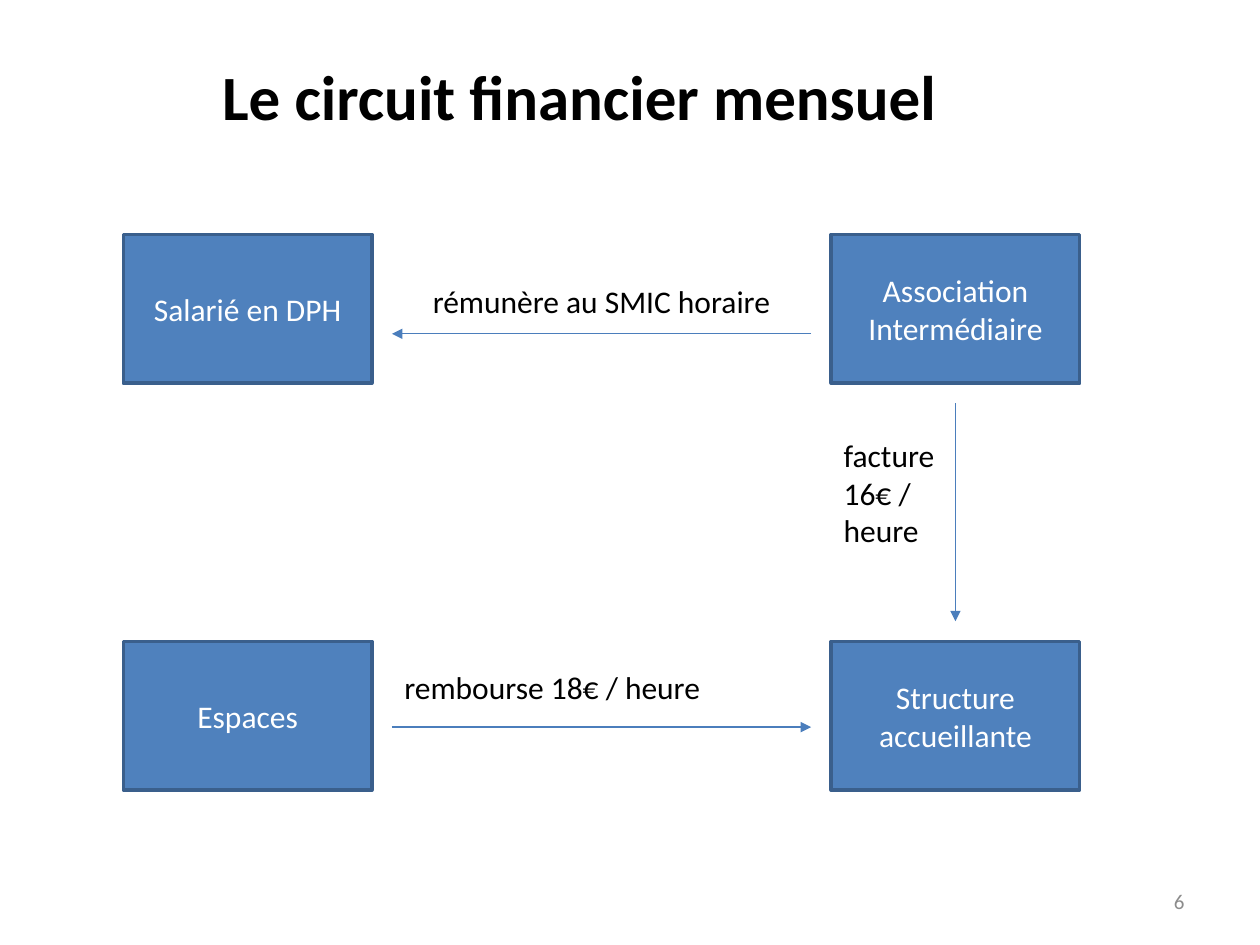
from lxml import etree
from pptx import Presentation
from pptx.dml.color import RGBColor
from pptx.enum.shapes import MSO_CONNECTOR as CONN, MSO_SHAPE as SHAPE
from pptx.enum.text import MSO_ANCHOR as ANCHOR, PP_ALIGN as ALIGN
from pptx.oxml.ns import qn
from pptx.util import Pt

COLORS = {"box": "4F81BD", "border": "3A5F8C", "arrow": "4B7EBC",
          "text": "000000", "light": "FFFFFF", "number": "8C8C8C"}


class Diagram:
    font = "Calibri"

    def __init__(self, slide):
        self.slide = slide

    def color(self, name):
        return RGBColor.from_string(COLORS[name])

    def add_text(self, sp, text, size=18, color="text", align=ALIGN.CENTER,
                 anchor=ANCHOR.MIDDLE, bold=False):
        tf = sp.text_frame
        tf.word_wrap = True
        tf.vertical_anchor = anchor
        p = tf.paragraphs[0]
        p.alignment = align
        r = p.add_run()
        r.text = text
        r.font.name, r.font.size, r.font.bold = self.font, Pt(size), bold
        r.font.color.rgb = self.color(color)

    def title(self, text, x, y, w, h):
        sp = self.slide.shapes.title
        sp.left, sp.top, sp.width, sp.height = Pt(x), Pt(y), Pt(w), Pt(h)
        self.add_text(sp, text, size=36, bold=True)

    def label(self, text, x, y, w, h, **style):
        sp = self.slide.shapes.add_textbox(Pt(x), Pt(y), Pt(w), Pt(h))
        self.add_text(sp, text, **style)

    def box(self, text, x, y, w, h):
        sp = self.slide.shapes.add_shape(SHAPE.RECTANGLE, Pt(x), Pt(y), Pt(w), Pt(h))
        sp.shadow.inherit = False
        sp.fill.solid()
        sp.fill.fore_color.rgb = self.color("box")
        sp.line.color.rgb = self.color("border")
        sp.line.width = Pt(2)
        self.add_text(sp, text, color="light")

    def arrow(self, x1, y1, x2, y2):
        sp = self.slide.shapes.add_connector(CONN.STRAIGHT, Pt(x1), Pt(y1), Pt(x2), Pt(y2))
        sp.line.color.rgb = self.color("arrow")
        sp.line.width = Pt(0.75)
        props = sp._element.spPr
        etree.SubElement(props.find(qn("a:ln")), qn("a:tailEnd"), type="triangle")
        etree.SubElement(props, qn("a:effectLst"))


def main():
    prs = Presentation()
    prs.slide_width, prs.slide_height = Pt(720), Pt(540)
    d = Diagram(prs.slides.add_slide(prs.slide_layouts[5]))

    # Title and slide number
    d.title("Le circuit financier mensuel", 31, 24.5, 600, 60)
    d.label("6", 516, 500.5, 168, 28.75, size=12, color="number", align=ALIGN.RIGHT)

    # Actors at the four corners
    w, h = 142, 85
    left, right, top, bottom = 70.5, 475, 134, 366.5
    actors = [("Salarié en DPH", left, top),
              ("Association Intermédiaire", right, top),
              ("Structure accueillante", right, bottom),
              ("Espaces", left, bottom)]
    for text, x, y in actors:
        d.box(text, x, y, w, h)

    # Payment flows, kept clear of the boxes
    gap = 11.5
    start, end = left + w + gap, right - gap
    middle = right + w / 2
    d.arrow(end, 190.75, start, 190.75)
    d.arrow(middle, top + h + gap, middle, bottom - gap)
    d.arrow(start, 415.5, end, 415.5)

    # Flow labels
    d.label("rémunère au SMIC horaire", start, 157.75, end - start, 29, anchor=ANCHOR.TOP)
    d.label("facture 16€ / heure", right, 245.5, 91, 72.75,
            align=ALIGN.LEFT, anchor=ANCHOR.TOP)
    d.label("rembourse 18€ / heure", start, 378, end - start, 29,
            align=ALIGN.LEFT, anchor=ANCHOR.TOP)

    prs.save("out.pptx")


if __name__ == "__main__":
    main()
